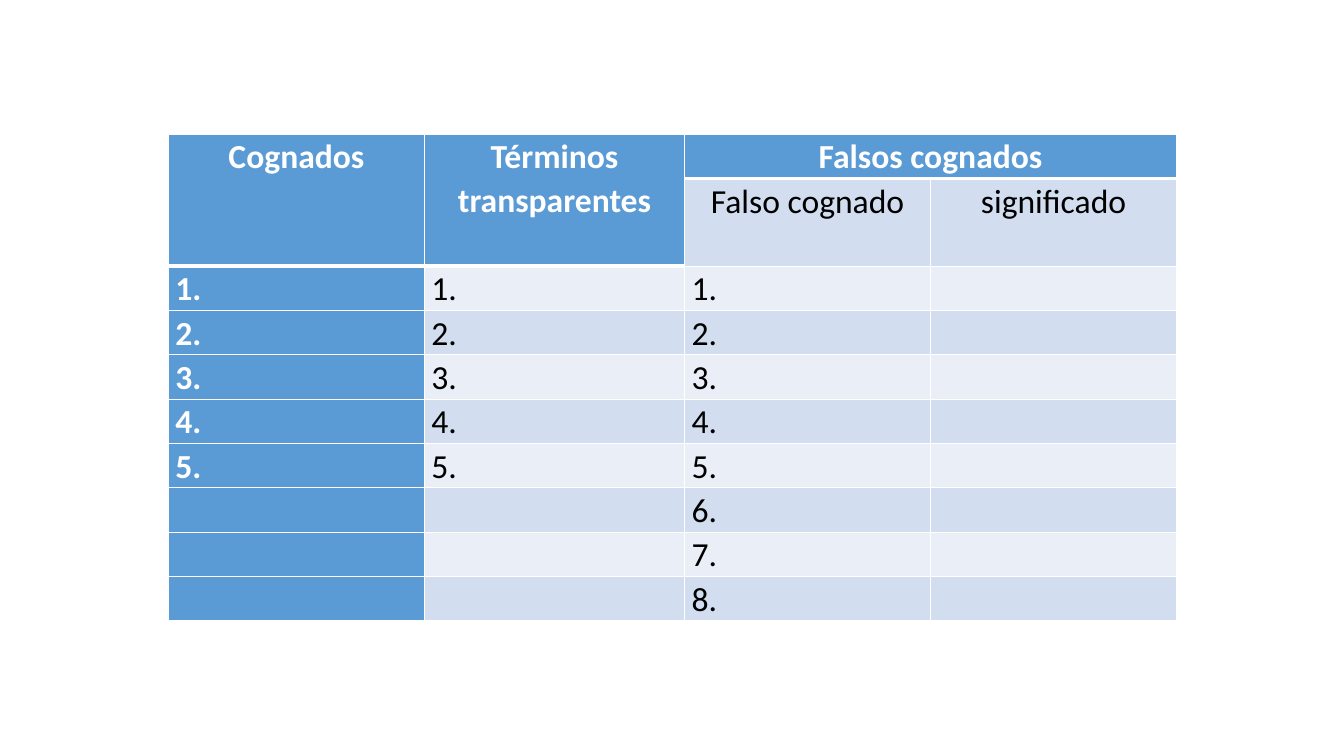
from lxml.etree import SubElement
from pptx import Presentation
from pptx.dml.color import RGBColor
from pptx.enum.text import PP_ALIGN
from pptx.oxml.ns import qn
from pptx.util import Pt

PX = 9144  # EMU per px, 100 px to the inch
COLORS = {
    "header": "5B9BD5",
    "band_dark": "D2DEEF",
    "band_light": "EAEFF7",
    "white": "FFFFFF",
    "black": "000000",
}

COLUMN_WIDTHS = [254, 258, 244, 244]
ROW_HEIGHTS = [44, 46] + [44] * 8
HEADER_ROWS = 2
LISTED_ITEMS = [5, 5, 8, 0]  # numbered entries in each column
HEADINGS = {
    (0, 0): "Cognados",
    (0, 1): "Términos transparentes",
    (0, 2): "Falsos cognados",
    (1, 2): "Falso cognado",
    (1, 3): "significado",
}
MERGES = [((0, 0), (1, 0)), ((0, 1), (1, 1)), ((0, 2), (0, 3))]


def write(frame, text, size=24, color="black", bold=False, align=PP_ALIGN.LEFT):
    paragraph = frame.paragraphs[0]
    paragraph.alignment = align
    paragraph.line_spacing = 1.07
    paragraph.font.size = Pt(size)
    if text:
        run = paragraph.add_run()
        run.text = text
        run.font.name = "Calibri"
        run.font.size = Pt(size)
        run.font.bold = bold
        run.font.color.rgb = RGBColor.from_string(COLORS[color])


class SlideBuilder:
    def __init__(self, slide):
        self.slide = slide

    def table(self, left, top, widths, heights):
        frame = self.slide.shapes.add_table(
            len(heights), len(widths), left * PX, top * PX,
            sum(widths) * PX, sum(heights) * PX)
        table = frame.table
        for column, width in zip(table.columns, widths):
            column.width = width * PX
        for row, height in zip(table.rows, heights):
            row.height = height * PX
        return table

    def borders(self, cell, **points):
        properties = cell._tc.get_or_add_tcPr()
        for side, width in points.items():
            line = SubElement(properties, qn(f"a:ln{side}"), w=str(Pt(width)))
            fill = SubElement(line, qn("a:solidFill"))
            SubElement(fill, qn("a:srgbClr"), val=COLORS["white"])

    def cell(self, cell, fill, bottom=1, text="", **text_format):
        cell.margin_left = cell.margin_right = 7 * PX
        cell.margin_top = cell.margin_bottom = 0
        self.borders(cell, L=1, R=1, B=bottom)
        cell.fill.solid()
        cell.fill.fore_color.rgb = RGBColor.from_string(COLORS[fill])
        write(cell.text_frame, text, **text_format)


def main():
    deck = Presentation()
    deck.slide_width, deck.slide_height = 1333 * PX, 750 * PX
    builder = SlideBuilder(deck.slides.add_slide(deck.slide_layouts[6]))

    # Cognate worksheet with merged headings
    worksheet = builder.table(167, 133, COLUMN_WIDTHS, ROW_HEIGHTS)
    for first, last in MERGES:
        worksheet.cell(*first).merge(worksheet.cell(*last))

    # Headings and numbered entries
    for row in range(len(ROW_HEIGHTS)):
        band = "band_dark" if row % 2 else "band_light"
        for column, listed in enumerate(LISTED_ITEMS):
            in_heading = row < HEADER_ROWS
            top_heading = row == 0 or (in_heading and column < 2)
            blue = top_heading or column == 0
            number = row - HEADER_ROWS + 1
            entry = f"{number}." if 1 <= number <= listed else ""
            builder.cell(
                worksheet.cell(row, column),
                fill="header" if blue else band,
                bottom=3 if top_heading else 1,
                text=HEADINGS.get((row, column), entry),
                color="white" if blue else "black",
                bold=blue,
                align=PP_ALIGN.CENTER if in_heading else PP_ALIGN.LEFT)

    deck.save("out.pptx")


if __name__ == "__main__":
    main()
